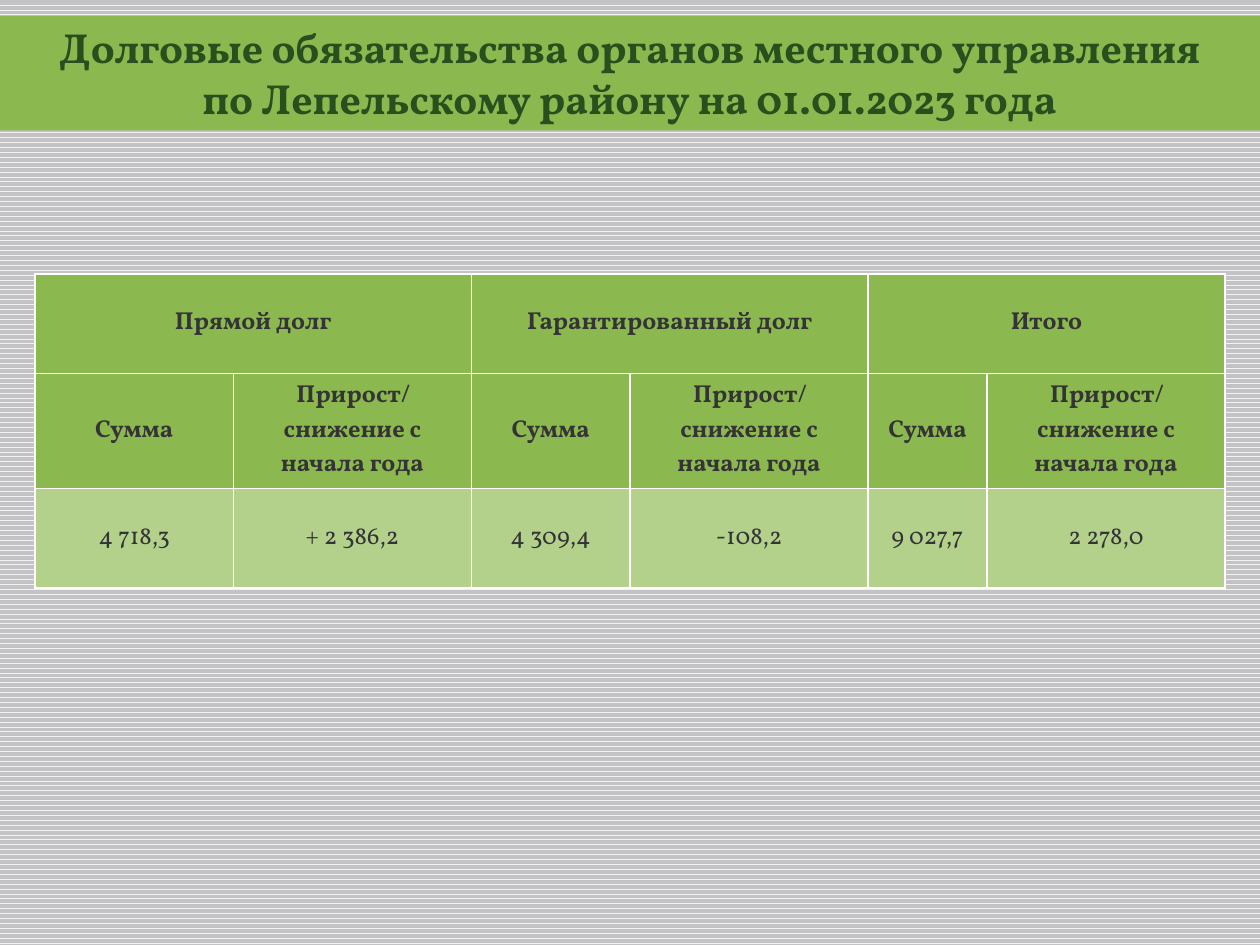
from lxml import etree
from pptx import Presentation
from pptx.dml.color import RGBColor
from pptx.enum.dml import MSO_PATTERN
from pptx.enum.shapes import MSO_SHAPE
from pptx.enum.text import MSO_ANCHOR, MSO_AUTO_SIZE, PP_ALIGN
from pptx.oxml import parse_xml
from pptx.oxml.ns import nsdecls
from pptx.util import Pt

WAVE = MSO_PATTERN.WAVE
RECT = MSO_SHAPE.RECTANGLE
TOP, MIDDLE = MSO_ANCHOR.TOP, MSO_ANCHOR.MIDDLE
GROW = MSO_AUTO_SIZE.SHAPE_TO_FIT_TEXT
CENTER = PP_ALIGN.CENTER

FONT = "Vollkorn"
GREEN, PALE, DARK, INK = "8CB94F", "B3D18B", "284F1D", "343436"
WHITE, GRAY, LIGHT = "FFFFFF", "C3C2C5", "F2F2F2"

TITLE = [
    "Долговые обязательства органов местного управления",
    "по Лепельскому району на 01.01.2023 года",
]
GROUPS = ["Прямой долг", "Гарантированный долг", "Итого"]
HEADS = ["Сумма", "Прирост/снижение с начала года"]
VALUES = ["4 718,3", "+ 2 386,2", "4 309,4", "-108,2", "9 027,7", "2 278,0"]
WIDTHS = [113.4, 136, 90.7, 136, 68, 136]


def color(code):
    return RGBColor.from_string(code)


class Deck:
    """Holds the style and the current slide, and draws each kind of element."""

    def __init__(self, width, height):
        self.show = Presentation()
        self.show.slide_width, self.show.slide_height = Pt(width), Pt(height)
        self.slide = self.show.slides.add_slide(self.show.slide_layouts[6])

    def backdrop(self, front, back):
        fill = self.slide.background.fill
        fill.patterned()
        fill.pattern = WAVE
        fill.fore_color.rgb = color(front)
        fill.back_color.rgb = color(back)

    def label(self, frame, lines, size, ink, bold):
        frame.text = "\n".join(lines)
        for line in frame.paragraphs:
            line.alignment = CENTER
            line.font.name, line.font.size = FONT, Pt(size)
            line.font.bold = bold
            line.font.color.rgb = color(ink)

    def banner(self, box, lines):
        shape = self.slide.shapes.add_shape(RECT, *map(Pt, box))
        shape.shadow.inherit = False
        shape.fill.solid()
        shape.fill.fore_color.rgb = color(GREEN)
        shape.line.fill.background()
        frame = shape.text_frame
        frame.word_wrap = True
        frame.auto_size = GROW
        frame.vertical_anchor = TOP
        self.label(frame, lines, 24, DARK, True)

    def border(self, cell, width):
        props = cell._tc.get_or_add_tcPr()
        for side in ("lnL", "lnR", "lnT", "lnB"):
            line = parse_xml(f'<a:{side} {nsdecls("a")} w="{Pt(width)}"/>')
            solid = etree.SubElement(line, line.tag.replace(side, "solidFill"))
            tint = etree.SubElement(solid, line.tag.replace(side, "srgbClr"))
            tint.set("val", WHITE)
            props.append(line)

    def cell(self, cell, text, fill, bold):
        self.border(cell, 1)
        cell.fill.solid()
        cell.fill.fore_color.rgb = color(fill)
        cell.vertical_anchor = MIDDLE
        self.label(cell.text_frame, [text], 14, INK, bold)

    def table(self, left, top, widths, height, rows):
        frame = self.slide.shapes.add_table(
            len(rows), len(widths), Pt(left), Pt(top),
            Pt(sum(widths)), Pt(height * len(rows)))
        table = frame.table
        for column, width in zip(table.columns, widths):
            column.width = Pt(width)
        for r, (texts, fill, bold) in enumerate(rows):
            table.rows[r].height = Pt(height)
            for c, text in enumerate(texts):
                self.cell(table.cell(r, c), text, fill, bold)
        for c in range(0, len(widths), 2):
            table.cell(0, c).merge(table.cell(0, c + 1))

    def save(self):
        self.show.save("out.pptx")


def main():
    deck = Deck(720, 540)
    deck.backdrop(LIGHT, GRAY)
    tops = [text for group in GROUPS for text in (group, "")]
    rows = [
        (tops, GREEN, True),
        (HEADS * len(GROUPS), GREEN, True),
        (VALUES, PALE, False),
    ]
    deck.table(20, 156.6, WIDTHS, 56.7, rows)
    deck.banner((-0.5, 9, 720.5, 65.5), TITLE)
    deck.save()


if __name__ == "__main__":
    main()
